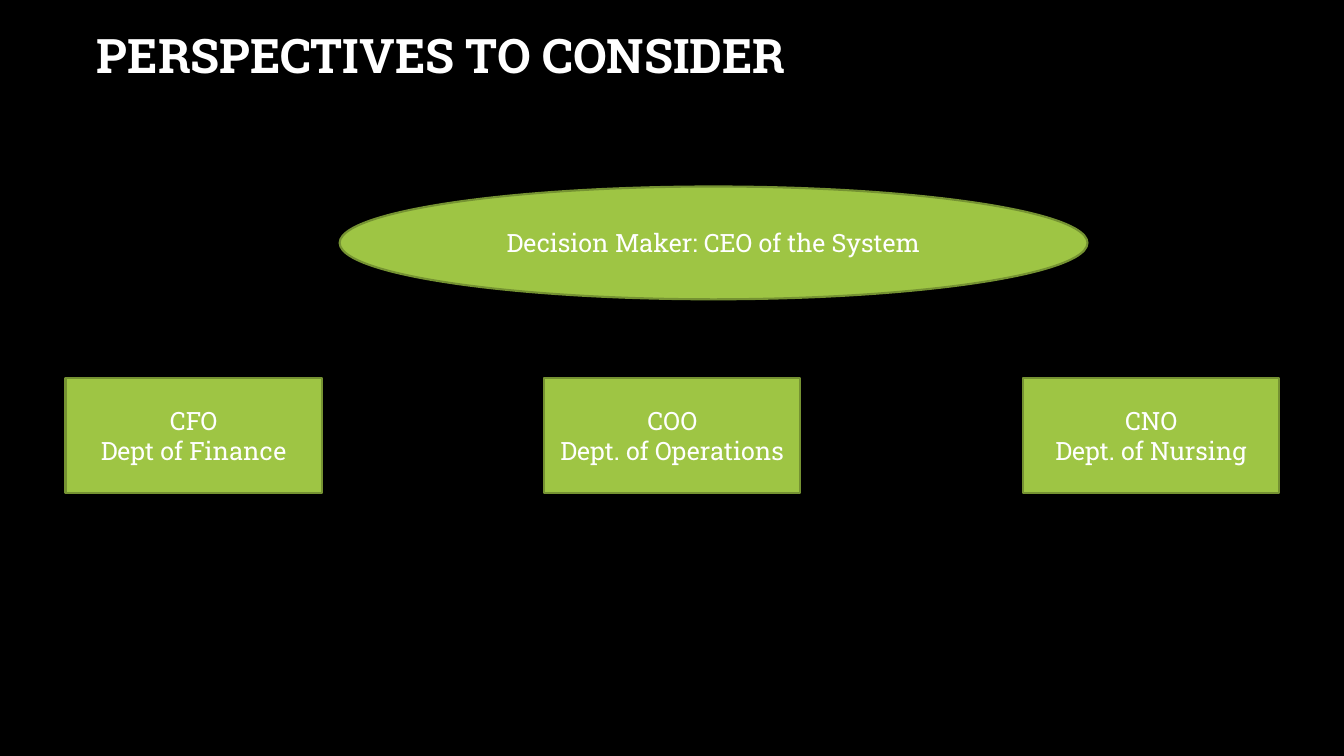
"""Build the slide of perspectives to consider."""
from pptx import Presentation
from pptx.dml.color import RGBColor
from pptx.enum.shapes import MSO_SHAPE
from pptx.enum.text import MSO_ANCHOR, PP_ALIGN
from pptx.util import Pt

HUES = {"back": "000000", "text": "FFFFFF", "fill": "9EC544", "edge": "759232"}
FACE = "Roboto Slab"
HEAD = {"size": Pt(34), "bold": True, "name": FACE}
BODY = {"size": Pt(18), "bold": False, "name": FACE}
ROLES = [
    ("CFO", "Dept of Finance"),
    ("COO", "Dept. of Operations"),
    ("CNO", "Dept. of Nursing"),
]
LEFT, STEP = 46.8, 342


def hue(name):
    return RGBColor.from_string(HUES[name])


def write(shape, lines, form, space=1.0):
    frame = shape.text_frame
    frame.word_wrap = True
    frame.vertical_anchor = MSO_ANCHOR.MIDDLE
    frame.text = "\n".join(lines)
    for para in frame.paragraphs:
        para.alignment = PP_ALIGN.CENTER
        para.line_spacing = space
        for run in para.runs:
            for key, value in form.items():
                setattr(run.font, key, value)
            run.font.color.rgb = hue("text")


def add_title(slide, text, box):
    title = slide.shapes.title
    for key, value in zip(("left", "top", "width", "height"), box):
        setattr(title, key, Pt(value))
    write(title, [text], HEAD, 0.9)


def add_node(slide, kind, lines, box):
    node = slide.shapes.add_shape(kind, *map(Pt, box))
    node.shadow.inherit = False
    node.fill.solid()
    node.fill.fore_color.rgb = hue("fill")
    node.line.color.rgb = hue("edge")
    node.line.width = Pt(1.5)
    write(node, lines, BODY)


def main():
    deck = Presentation()
    deck.slide_width, deck.slide_height = Pt(960), Pt(540)
    slide = deck.slides.add_slide(deck.slide_layouts[5])
    slide.background.fill.solid()
    slide.background.fill.fore_color.rgb = hue("back")
    add_title(slide, "PERSPECTIVES TO CONSIDER", (33, 0.7, 564.5, 82))
    add_node(slide, MSO_SHAPE.OVAL, ["Decision Maker: CEO of the System"],
             (242.6, 133.2, 534.2, 80.6))
    for i, lines in enumerate(ROLES):
        add_node(slide, MSO_SHAPE.RECTANGLE, lines,
                 (LEFT + i * STEP, 270, 183, 82))
    deck.save("out.pptx")


if __name__ == "__main__":
    main()
